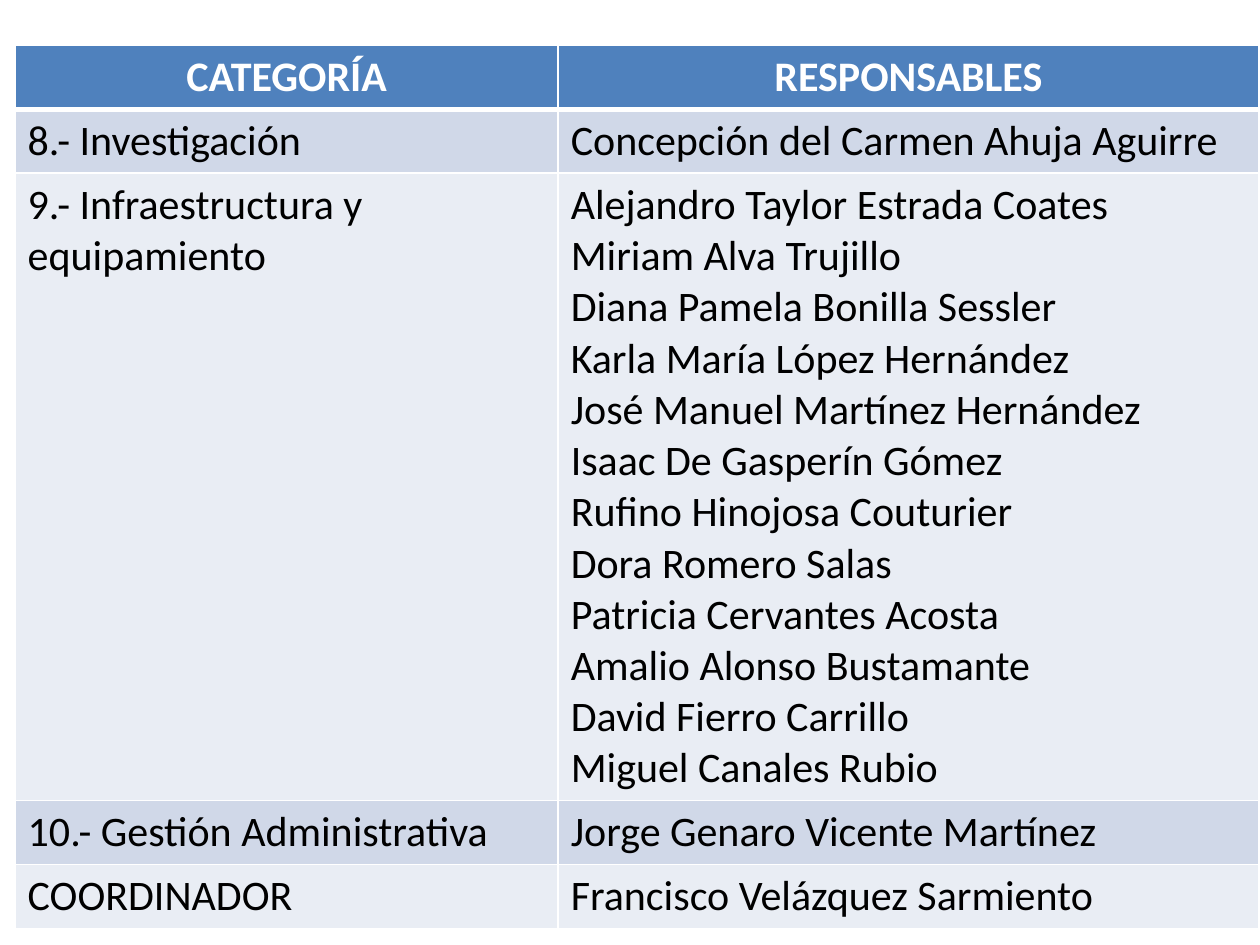
from lxml import etree
from pptx import Presentation, util as u
from pptx.dml.color import RGBColor
from pptx.enum import text
from pptx.oxml.ns import qn

WHITE = RGBColor(0xFF, 0xFF, 0xFF)
BLACK = RGBColor(0x00, 0x00, 0x00)
BLUE = RGBColor(0x4F, 0x81, 0xBD)
BANDS = (RGBColor(0xD0, 0xD8, 0xE8), RGBColor(0xE9, 0xED, 0xF4))

HEADS = ("CATEGORÍA", "RESPONSABLES")
TEAM = (
    "Alejandro Taylor Estrada Coates",
    "Miriam Alva Trujillo",
    "Diana Pamela Bonilla Sessler",
    "Karla María López Hernández",
    "José Manuel Martínez Hernández",
    "Isaac De Gasperín Gómez",
    "Rufino Hinojosa Couturier",
    "Dora Romero Salas",
    "Patricia Cervantes Acosta",
    "Amalio Alonso Bustamante",
    "David Fierro Carrillo",
    "Miguel Canales Rubio",
)
ROWS = (
    HEADS,
    ("8.- Investigación", "Concepción del Carmen Ahuja Aguirre"),
    ("9.- Infraestructura y equipamiento", "\n".join(TEAM)),
    ("10.- Gestión Administrativa", "Jorge Genaro Vicente Martínez"),
    ("COORDINADOR", "Francisco Velázquez Sarmiento"),
)


class Deck:
    font = "Calibri"
    size = u.Pt(24)

    def __init__(self, slide):
        self.slide = slide

    def table(self, rows, left, top, width, height, cols, tall):
        frame = self.slide.shapes.add_table(
            len(rows), len(cols), left, top, width, tall * len(rows))
        grid = frame.table
        for col, wide in zip(grid.columns, cols):
            col.width = wide
        for i, row in enumerate(rows):
            grid.rows[i].height = tall
            for j, words in enumerate(row):
                self.cell(grid.cell(i, j), words, i)
        frame.height = height  # the rows grow to fit their text

    def cell(self, cell, words, row):
        head = row == 0
        cell.text = words
        for para in cell.text_frame.paragraphs:
            font = para.font
            font.name, font.size, font.bold = self.font, self.size, head
            font.color.rgb = WHITE if head else BLACK
            if head:
                para.alignment = text.PP_ALIGN.CENTER
        # Borders come before the fill in the cell properties
        for side in "LRTB":
            thick = (side == "B" and head) or (side == "T" and row == 1)
            self.edge(cell, side, u.Pt(3 if thick else 1))
        cell.fill.solid()
        cell.fill.fore_color.rgb = BLUE if head else BANDS[(row - 1) % 2]

    def edge(self, cell, side, wide):
        props = cell._tc.get_or_add_tcPr()
        line = etree.SubElement(props, qn("a:ln" + side), w=str(int(wide)))
        fill = etree.SubElement(line, qn("a:solidFill"))
        etree.SubElement(fill, qn("a:srgbClr"), val=str(WHITE))


def main():
    prs = Presentation()
    prs.slide_width, prs.slide_height = u.Inches(10), u.Inches(7.5)
    deck = Deck(prs.slides.add_slide(prs.slide_layouts[6]))

    # Categories and the people in charge
    deck.table(ROWS, u.Inches(0.12), u.Inches(0.36), u.Inches(9.87),
               u.Inches(6.9), (u.Inches(4.31), u.Inches(5.56)),
               u.Inches(0.41))

    prs.save("out.pptx")


if __name__ == "__main__":
    main()
